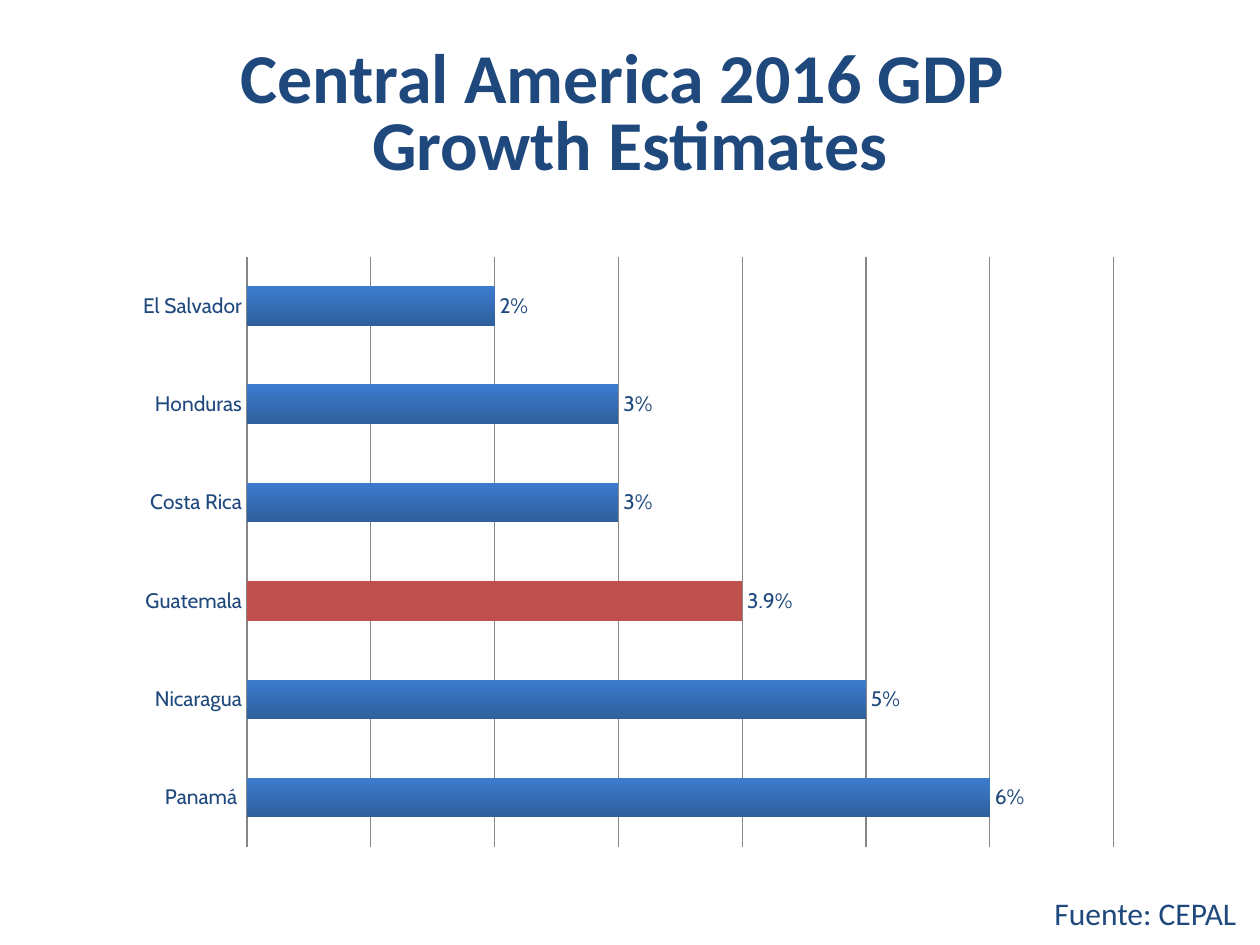
import pptx
import pptx.chart.data
import pptx.dml.color
import pptx.enum.chart
import pptx.enum.text
import pptx.oxml
import pptx.oxml.ns
import pptx.util
from pptx.util import Inches, Pt

TITLE_LINES = ["Central America 2016 GDP ", "Growth Estimates"]
SOURCE_NOTE = "Fuente: CEPAL"
GROWTH = [
    ("Panamá ", 0.06),
    ("Nicaragua", 0.05),
    ("Guatemala", 0.04),
    ("Costa Rica", 0.03),
    ("Honduras", 0.03),
    ("El Salvador", 0.02),
]
HIGHLIGHT = "Guatemala"
HIGHLIGHT_LABEL = "3.9%"
PLOT_AREA = {"x": 0.12, "y": 0.02, "w": 0.86, "h": 0.96}

THEME = {
    "text": "1F497D", "bar_top": "3C7BCE", "bar_bottom": "2F5F9C",
    "highlight": "C0504D", "grid": "868686",
    "font": "Calibri", "chart_font": "Cabin",
    "title_size": 40, "note_size": 18, "chart_size": 12,
}


def color(role):
    return pptx.dml.color.RGBColor.from_string(THEME[role])


def style_font(font, face, size, bold=False):
    font.name = THEME[face]
    font.size = Pt(THEME[size])
    font.bold = bold
    font.color.rgb = color("text")


def add_title(slide):
    frame = slide.shapes.add_textbox(
        Inches(0.5), Inches(0.3), Inches(9), Inches(1.25)).text_frame
    frame.word_wrap = True
    frame.vertical_anchor = pptx.enum.text.MSO_ANCHOR.MIDDLE
    paragraph = frame.paragraphs[0]
    paragraph.alignment = pptx.enum.text.PP_ALIGN.CENTER
    paragraph.line_spacing = 0.8
    for index, line in enumerate(TITLE_LINES):
        if index:
            paragraph.add_line_break()
        run = paragraph.add_run()
        run.text = line
        style_font(run.font, "font", "title_size", bold=True)


def add_source_note(slide):
    frame = slide.shapes.add_textbox(
        Inches(8.27), Inches(7.05), Inches(1.73), Inches(0.4)).text_frame
    frame.word_wrap = False
    run = frame.paragraphs[0].add_run()
    run.text = SOURCE_NOTE
    style_font(run.font, "font", "note_size")


def fix_plot_area(chart):
    """Pin the inner plot area to fractions of the chart frame."""
    plot_area = chart.plots[0]._element.getparent()
    for old in plot_area.findall(pptx.oxml.ns.qn("c:layout")):
        plot_area.remove(old)
    places = "".join(f'<c:{side} val="{part}"/>' for side, part in PLOT_AREA.items())
    plot_area.insert(0, pptx.oxml.parse_xml(
        f'<c:layout {pptx.oxml.ns.nsdecls("c")}><c:manualLayout>'
        '<c:layoutTarget val="inner"/><c:xMode val="edge"/><c:yMode val="edge"/>'
        f'{places}</c:manualLayout></c:layout>'))


def style_axes(chart):
    countries = chart.category_axis
    countries.major_tick_mark = pptx.enum.chart.XL_TICK_MARK.NONE
    countries.format.line.color.rgb = color("grid")
    rates = chart.value_axis
    rates.visible = False
    rates.minimum_scale, rates.maximum_scale, rates.major_unit = 0, 0.07, 0.01
    rates.tick_labels.number_format = "0%"
    rates.tick_labels.number_format_is_linked = False
    rates.has_major_gridlines = True
    rates.major_gridlines.format.line.color.rgb = color("grid")


def style_bars(chart):
    plot = chart.plots[0]
    plot.gap_width = 150
    plot.vary_by_categories = False
    bars = plot.series[0]
    bars.invert_if_negative = False
    fill = bars.format.fill
    fill.gradient()
    fill.gradient_angle = 270
    for stop, role in zip(fill.gradient_stops, ("bar_top", "bar_bottom")):
        stop.color.rgb = color(role)

    outside = pptx.enum.chart.XL_LABEL_POSITION.OUTSIDE_END
    labels = bars.data_labels
    labels.show_value = True
    labels.number_format = "0%"
    labels.number_format_is_linked = False
    labels.position = outside
    style_font(labels.font, "chart_font", "chart_size")

    point = bars.points[[country for country, _ in GROWTH].index(HIGHLIGHT)]
    point.format.fill.solid()
    point.format.fill.fore_color.rgb = color("highlight")
    run = point.data_label.text_frame.paragraphs[0].add_run()
    run.text = HIGHLIGHT_LABEL
    style_font(run.font, "chart_font", "chart_size")
    point.data_label.position = outside


def add_growth_chart(slide):
    growth_data = pptx.chart.data.CategoryChartData(number_format="0%")
    growth_data.categories = [country for country, _ in GROWTH]
    growth_data.add_series("Series 1", [rate for _, rate in GROWTH])
    chart = slide.shapes.add_chart(
        pptx.enum.chart.XL_CHART_TYPE.BAR_CLUSTERED,
        Inches(1), Inches(1.94), Inches(8), Inches(4.88), growth_data).chart
    chart.has_legend = False
    chart.has_title = False
    style_font(chart.font, "chart_font", "chart_size")
    style_axes(chart)
    style_bars(chart)
    fix_plot_area(chart)


def main():
    deck = pptx.Presentation()
    deck.slide_width, deck.slide_height = Inches(10), Inches(7.5)
    slide = deck.slides.add_slide(deck.slide_layouts[6])
    add_title(slide)
    add_growth_chart(slide)
    add_source_note(slide)
    deck.save("out.pptx")


if __name__ == "__main__":
    main()
